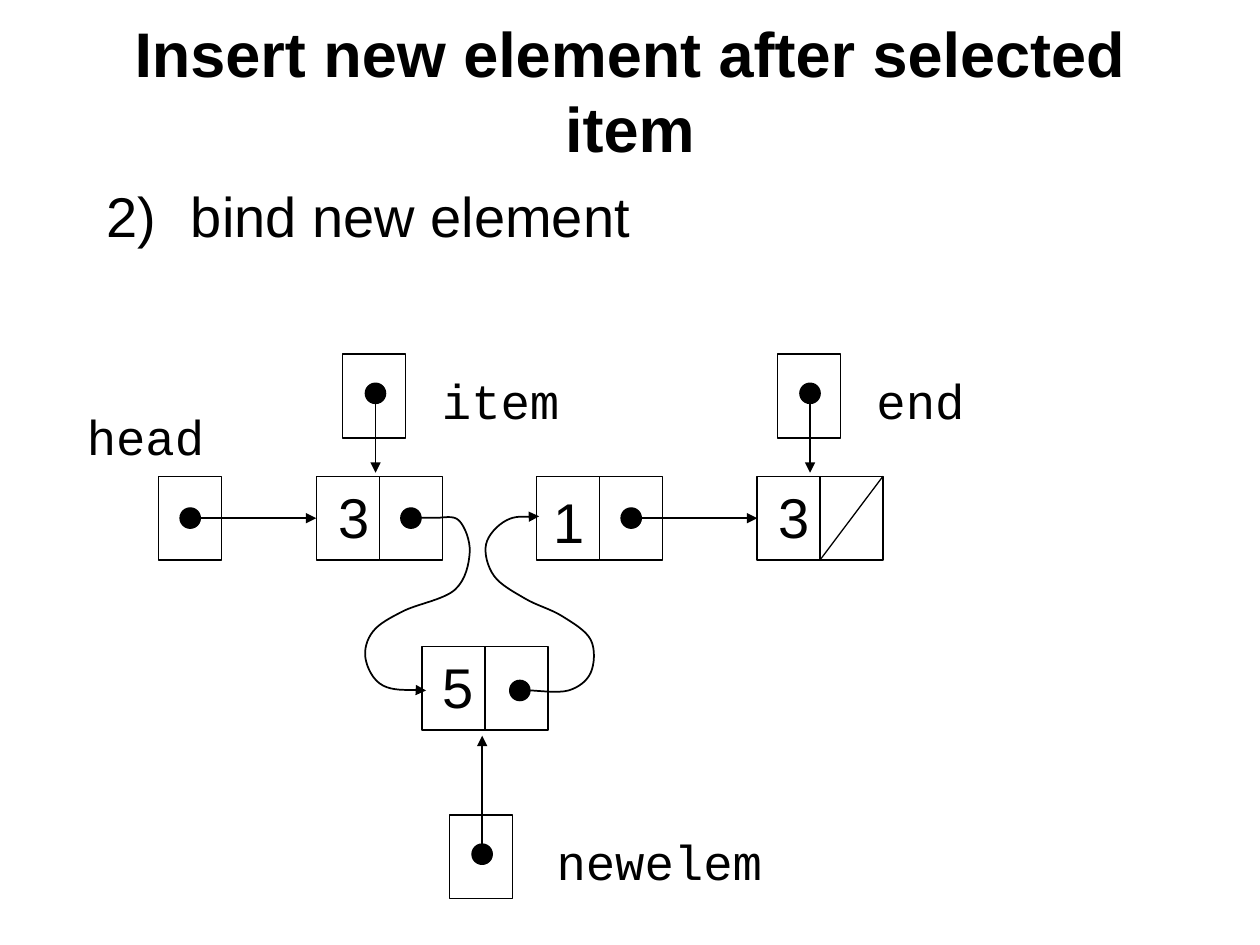
from dataclasses import dataclass

from lxml.etree import SubElement
from pptx import Presentation
from pptx.dml.color import RGBColor
from pptx.enum.shapes import MSO_CONNECTOR as Connector, MSO_SHAPE as Shape
from pptx.enum.text import MSO_ANCHOR as Anchor, PP_ALIGN as Align
from pptx.oxml.ns import qn
from pptx.util import Cm, Pt


@dataclass(frozen=True)
class Theme:
    ink: RGBColor = RGBColor(0, 0, 0)
    body_font: str = "Arial"
    code_font: str = "Courier New"
    title_size: int = 36
    body_size: int = 32
    code_size: int = 28
    thin: float = 0.75
    arrow: float = 1


THEME = Theme()

# Lengths in centimetres
CELL_W, CELL_H = 1.27, 1.69
DOT = 0.41
ROW_Y = 9.6
HEAD_X = 3.2
NODE_X, NODE_STEP = 6.38, 4.44
POINTER_Y = 7.14
NEW_X, NEW_Y = 8.51, 13.03


def add_text(page, text, x, y, width, height, size=THEME.body_size,
             font=THEME.body_font, bold=False, align=Align.LEFT,
             anchor=Anchor.TOP, wrap=False):
    box = page.shapes.add_textbox(Cm(x), Cm(y), Cm(width), Cm(height))
    frame = box.text_frame
    frame.word_wrap = wrap
    frame.vertical_anchor = anchor
    para = frame.paragraphs[0]
    para.alignment = align
    span = para.add_run()
    span.text = text
    span.font.size = Pt(size)
    span.font.name = font
    span.font.bold = bold
    span.font.color.rgb = THEME.ink
    return para


def number_item(para, start, indent):
    """Give a paragraph a hanging automatic number such as 2)."""
    props = para._p.get_or_add_pPr()
    props.set("marL", str(Cm(indent)))
    props.set("indent", str(Cm(-indent)))
    spacing = SubElement(props, qn("a:spcBef"))
    SubElement(spacing, qn("a:spcPct"), val="20000")
    SubElement(props, qn("a:buFont"), typeface=THEME.body_font)
    SubElement(props, qn("a:buAutoNum"), type="arabicParenR", startAt=str(start))


def style_line(shape, weight, arrow=False):
    shape.line.color.rgb = THEME.ink
    shape.line.width = Pt(weight)
    if arrow:
        SubElement(shape.line._get_or_add_ln(), qn("a:tailEnd"), type="triangle")


def add_cell(page, x, y):
    cell = page.shapes.add_shape(Shape.RECTANGLE, Cm(x), Cm(y), Cm(CELL_W), Cm(CELL_H))
    cell.shadow.inherit = False
    cell.fill.background()
    style_line(cell, THEME.thin)


def add_dot(page, x, y):
    dot = page.shapes.add_shape(Shape.OVAL, Cm(x - DOT / 2), Cm(y - DOT / 2), Cm(DOT), Cm(DOT))
    dot.shadow.inherit = False
    dot.fill.solid()
    dot.fill.fore_color.rgb = THEME.ink
    style_line(dot, THEME.thin)


def add_line(page, start, end, weight=THEME.arrow, arrow=True):
    line = page.shapes.add_connector(Connector.STRAIGHT, *map(Cm, start + end))
    style_line(line, weight, arrow)
    SubElement(line._element.spPr, qn("a:effectLst"))


def add_curve(page, knots):
    """Draw a smooth arrow through the knots as a Catmull-Rom spline."""
    points = [(Cm(x), Cm(y)) for x, y in knots]
    builder = page.shapes.build_freeform(*points[0], scale=1.0)
    builder.add_line_segments(points[1:], close=False)
    curve = builder.convert_to_shape()
    curve.shadow.inherit = False
    curve.fill.background()
    style_line(curve, THEME.arrow, arrow=True)

    # Turn each straight segment into a Bezier segment
    left, top = (min(axis) for axis in zip(*points))
    padded = [points[0], *points, points[-1]]
    segments = list(curve._element.iter(qn("a:lnTo")))
    for segment, before, start, end, after in zip(
            segments, padded, padded[1:], padded[2:], padded[3:]):
        control_1 = [s + (e - b) / 6 for b, s, e in zip(before, start, end)]
        control_2 = [e - (a - s) / 6 for s, e, a in zip(start, end, after)]
        segment.clear()
        segment.tag = qn("a:cubicBezTo")
        for x, y in (control_1, control_2, end):
            SubElement(segment, qn("a:pt"), x=str(round(x - left)), y=str(round(y - top)))


def add_node(page, value, x, y, text_dx=0.18, text_dy=0.0, align=Align.CENTER):
    add_cell(page, x, y)
    add_cell(page, x + CELL_W, y)
    add_text(page, value, x + text_dx, y + text_dy, 1.15, 1.6, align=align)


def add_label(page, text, x, y, width):
    add_text(page, text, x, y, width, 1.45, size=THEME.code_size, font=THEME.code_font)


def add_pointer(page, x, y, target_y):
    """Draw a pointer cell with a vertical arrow to its target."""
    center = (x + 0.66, y + 0.79)
    add_cell(page, x, y)
    add_line(page, center, (center[0], target_y))
    add_dot(page, *center)


def add_link(page, x):
    """Draw a dot in the list row with an arrow to the next node."""
    center = (x + CELL_W / 2, ROW_Y + CELL_H / 2)
    add_line(page, center, (center[0] + 2.54, center[1]))
    add_dot(page, *center)


def main():
    deck = Presentation()
    deck.slide_width, deck.slide_height = Cm(25.4), Cm(19.05)
    page = deck.slides.add_slide(deck.slide_layouts[6])

    # Heading and step
    add_text(page, "Insert new element after selected item", 1.9, 0.91, 21.6, 1.8,
             size=THEME.title_size, bold=True, align=Align.CENTER,
             anchor=Anchor.MIDDLE, wrap=True)
    step = add_text(page, "bind new element", 1.9, 3.53, 21.6, 3, wrap=True)
    number_item(step, start=2, indent=1.7)

    # List row
    first, second, third = (NODE_X + i * NODE_STEP for i in range(3))
    add_node(page, "3", first, ROW_Y)
    add_node(page, "1", second, ROW_Y, text_dx=0.08, text_dy=0.1, align=Align.LEFT)
    add_node(page, "3", third, ROW_Y)
    add_cell(page, HEAD_X, ROW_Y)
    add_link(page, HEAD_X)
    add_link(page, second + CELL_W)
    add_dot(page, first + 1.5 * CELL_W, ROW_Y + CELL_H / 2)
    add_line(page, (third + 2 * CELL_W, ROW_Y), (third + CELL_W, ROW_Y + CELL_H),
             weight=THEME.thin, arrow=False)

    # New element
    add_node(page, "5", NEW_X, NEW_Y, text_dx=0.16)
    add_dot(page, 10.48, 13.92)

    # Pointers
    for x, y, target_y in [(6.91, POINTER_Y, 9.53), (15.67, POINTER_Y, 9.53),
                           (9.06, 16.43, 14.83)]:
        add_pointer(page, x, y, target_y)

    # Pointer names
    for text, x, y, width in [("head", 1.5, 8.08, 2.9), ("item", 8.66, 7.34, 2.9),
                              ("end", 17.42, 7.34, 2.31), ("newelem", 10.97, 16.64, 4.7)]:
        add_label(page, text, x, y, width)

    # Bindings to and from the new element
    add_curve(page, [(10.69, 13.92), (11.46, 13.92), (11.91, 13.56), (11.91, 12.9),
                     (11.33, 12.42), (10.59, 12.07), (9.96, 11.61), (9.8, 10.97),
                     (10.21, 10.49), (10.87, 10.41)])
    add_curve(page, [(8.28, 10.44), (8.76, 10.44), (9.25, 10.49), (9.47, 11.13),
                     (9.17, 11.89), (8.13, 12.32), (7.52, 12.73), (7.37, 13.28),
                     (7.72, 13.82), (8.59, 13.92)])

    deck.save("out.pptx")


if __name__ == "__main__":
    main()
